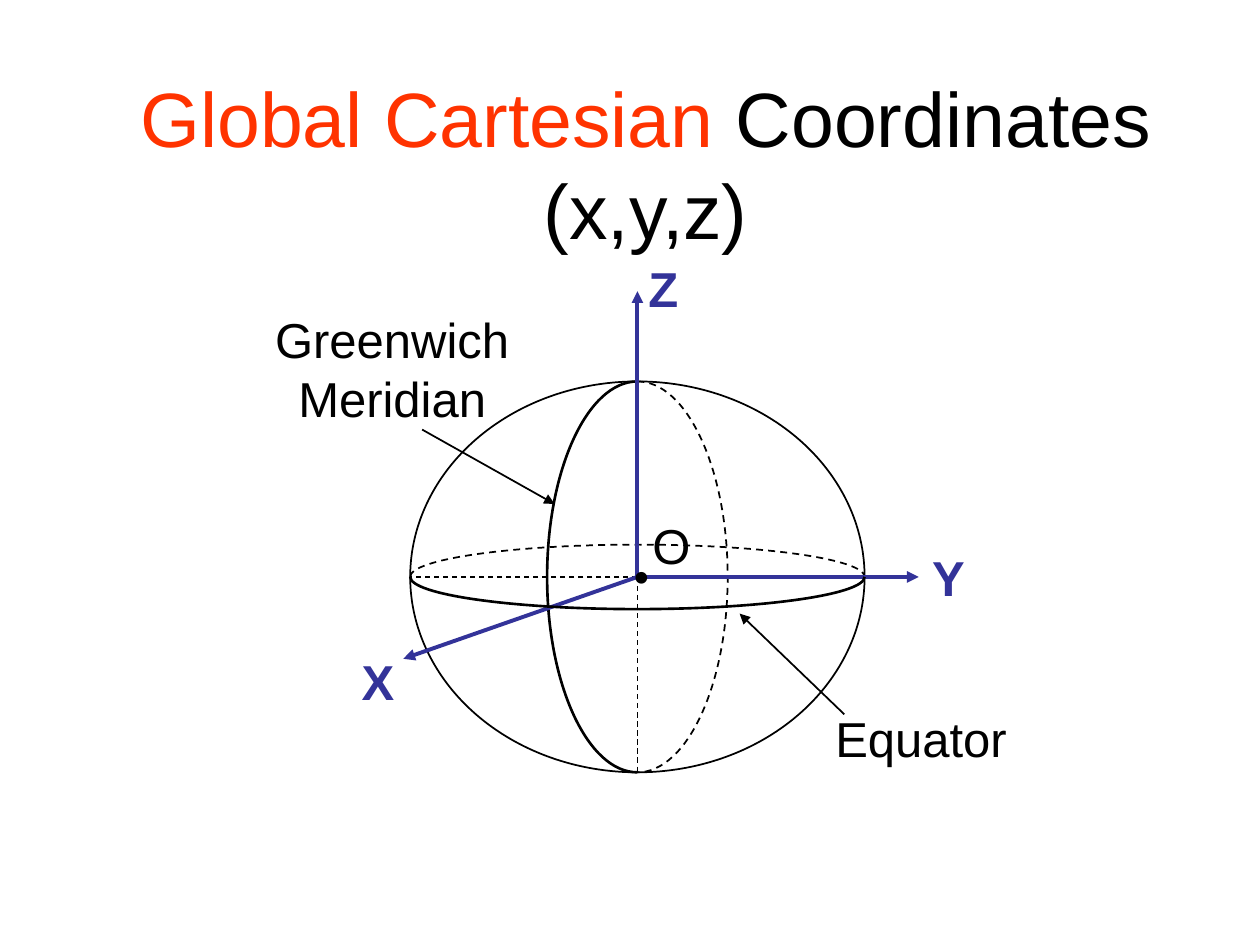
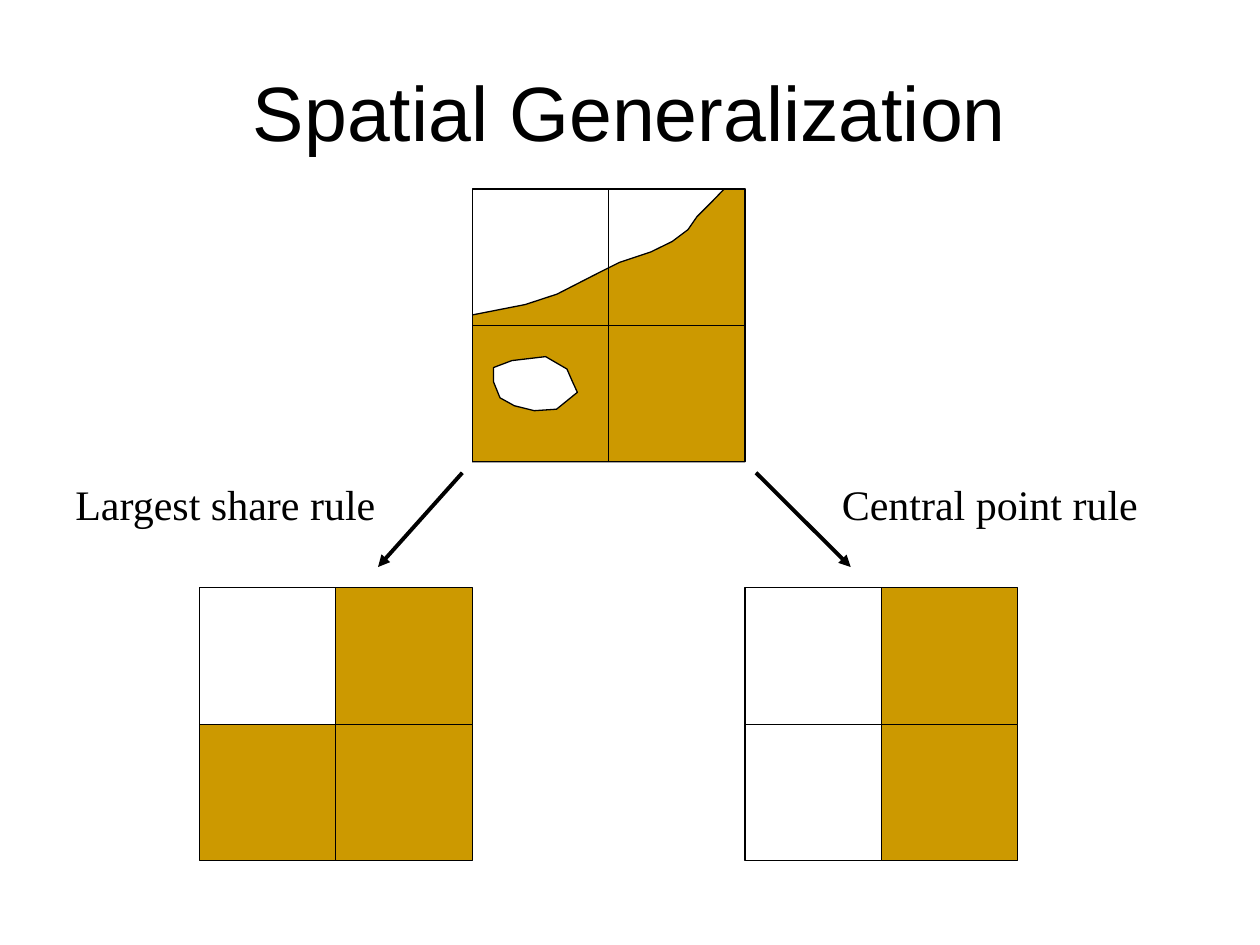
"""Build two slides on global coordinates and spatial generalization."""
from dataclasses import dataclass
from math import cos, radians, sin

from lxml import etree
from pptx import Presentation, util as u
from pptx.dml.color import RGBColor
from pptx.enum import dml, shapes, text
from pptx.oxml import ns

COLORS = {"ink": "000000", "accent": "FF3300", "axis": "333399",
          "land": "CC9900", "water": "FFFFFF"}
SANS, SERIF = "Arial", "Times New Roman"
QUARTER_HANDLE = 0.55
Point = tuple[float, float]


@dataclass(frozen=True)
class Label:
    words: str
    left: float
    top: float
    width: float
    height: float = 1.45
    size: int = 28
    font: str = SANS
    color: str = "ink"
    bold: bool = False
    centered: bool = False


@dataclass(frozen=True)
class Stroke:
    start: Point
    end: Point
    weight: float
    color: str = "ink"
    dashed: bool = False
    arrow: bool = False


@dataclass(frozen=True)
class HalfRing:
    radius_x: float
    radius_y: float
    first_angle: int
    weight: float
    dashed: bool = False


def rgb(color: str) -> RGBColor:
    return RGBColor.from_string(COLORS[color])


def style_line(line, weight: float, color: str = "ink", dashed: bool = False) -> None:
    line.color.rgb = rgb(color)
    line.width = u.Pt(weight)
    if dashed:
        line.dash_style = dml.MSO_LINE.DASH


def style_shape(shape, weight: float, fill: str | None = None, dashed: bool = False) -> None:
    shape.shadow.inherit = False
    if fill:
        shape.fill.solid()
        shape.fill.fore_color.rgb = rgb(fill)
    else:
        shape.fill.background()
    style_line(shape.line, weight, dashed=dashed)


def style_run(run, size: int, font: str, color: str, bold: bool = False) -> None:
    run.font.size = u.Pt(size)
    run.font.name = font
    run.font.color.rgb = rgb(color)
    run.font.bold = bold


def draw_title(slide, pieces: list[tuple[str, str]], left: float, top: float,
               width: float) -> None:
    frame = slide.shapes.add_textbox(
        u.Cm(left), u.Cm(top), u.Cm(width), u.Cm(3.18)).text_frame
    frame.word_wrap = True
    frame.vertical_anchor = text.MSO_ANCHOR.MIDDLE
    heading = frame.paragraphs[0]
    heading.alignment = text.PP_ALIGN.CENTER
    for words, color in pieces:
        run = heading.add_run()
        run.text = words
        style_run(run, 44, SANS, color)


def draw_label(slide, label: Label) -> None:
    frame = slide.shapes.add_textbox(
        u.Cm(label.left), u.Cm(label.top), u.Cm(label.width), u.Cm(label.height)).text_frame
    frame.word_wrap = False
    frame.auto_size = text.MSO_AUTO_SIZE.SHAPE_TO_FIT_TEXT
    frame.text = label.words
    for paragraph in frame.paragraphs:
        if label.centered:
            paragraph.alignment = text.PP_ALIGN.CENTER
        for run in paragraph.runs:
            style_run(run, label.size, label.font, label.color, label.bold)


def draw_stroke(slide, stroke: Stroke) -> None:
    connector = slide.shapes.add_connector(
        shapes.MSO_CONNECTOR.STRAIGHT,
        *(u.Cm(value) for value in stroke.start + stroke.end))
    style_line(connector.line, stroke.weight, stroke.color, stroke.dashed)
    if stroke.arrow:
        etree.SubElement(connector.line._get_or_add_ln(), ns.qn("a:tailEnd"), type="triangle")
    etree.SubElement(connector._element.spPr, ns.qn("a:effectLst"))


def add_outline(slide, points: list[Point], close: bool = True):
    first, *rest = [(u.Cm(x), u.Cm(y)) for x, y in points]
    builder = slide.shapes.build_freeform(*first)
    builder.add_line_segments(rest, close=close)
    return builder.convert_to_shape()


def bend_segments(outline) -> None:
    segments = list(outline._element.iter(ns.qn("a:lnTo")))
    for index in range(0, len(segments), 3):
        curve = etree.Element(ns.qn("a:cubicBezTo"))
        segments[index].addprevious(curve)
        for segment in segments[index:index + 3]:
            curve.append(segment[0])
            segment.getparent().remove(segment)


def draw_half_ring(slide, center: Point, ring: HalfRing) -> None:
    def place(angle: int, handle: float = 0) -> Point:
        a = radians(angle)
        return (center[0] + ring.radius_x * (cos(a) - handle * sin(a)),
                center[1] + ring.radius_y * (sin(a) + handle * cos(a)))

    points = [place(ring.first_angle)]
    for angle in (ring.first_angle, ring.first_angle + 90):
        points += [place(angle, QUARTER_HANDLE), place(angle + 90, -QUARTER_HANDLE),
                   place(angle + 90)]
    outline = add_outline(slide, points, close=False)
    bend_segments(outline)
    style_shape(outline, ring.weight, dashed=ring.dashed)


def draw_preset(slide, kind, left: float, top: float, width: float, height: float,
                weight: float, fill: str | None = None) -> None:
    shape = slide.shapes.add_shape(
        kind, u.Cm(left), u.Cm(top), u.Cm(width), u.Cm(height))
    style_shape(shape, weight, fill)


def build_coordinates(slide) -> None:
    draw_title(slide, [("Global Cartesian", "accent"), (" Coordinates (x,y,z)", "ink")],
               1.06, 1.69, 23.92)
    origin = (12.85, 11.63)
    globe_x, globe_y = 4.58, 3.94
    meridian_x, equator_y = 1.82, 0.65
    west = (origin[0] - globe_x, origin[1])
    south = (origin[0], origin[1] + globe_y)

    draw_half_ring(slide, origin, HalfRing(meridian_x, globe_y, 90, 1.5))
    draw_preset(slide, shapes.MSO_SHAPE.OVAL, origin[0] - globe_x, origin[1] - globe_y,
                2 * globe_x, 2 * globe_y, 1)
    for ring in (HalfRing(globe_x, equator_y, 180, 1, True),
                 HalfRing(meridian_x, globe_y, 270, 1, True)):
        draw_half_ring(slide, origin, ring)

    for hidden_end in (west, south):
        draw_stroke(slide, Stroke(origin, hidden_end, 0.75, dashed=True))
    for axis_tip in ((8.13, 13.28), (18.52, 11.63), (12.85, 5.87)):
        draw_stroke(slide, Stroke(origin, axis_tip, 2.25, "axis", arrow=True))
    for start, end in (((8.51, 8.66), (11.18, 10.16)), ((17.02, 14.4), (14.91, 12.37))):
        draw_stroke(slide, Stroke(start, end, 1, arrow=True))

    for axis, left, top in (("X", 7.04, 13), ("Y", 18.54, 10.92), ("Z", 12.82, 5.08)):
        draw_label(slide, Label(axis, left, top, 1.17, color="axis", bold=True))
    for label in (Label("O", 12.9, 10.26, 1.27),
                  Label("Greenwich\nMeridian", 5.29, 6.12, 5.23, 2.62, centered=True),
                  Label("Equator", 16.59, 14.16, 3.99),
                  Label("•", 12.51, 10.88, 0.86, font=SERIF)):
        draw_label(slide, label)
    draw_half_ring(slide, origin, HalfRing(globe_x, equator_y, 0, 1.5))


def build_generalization(slide) -> None:
    draw_title(slide, [("Spatial Generalization", "ink")], 1.9, 0.64, 21.6)
    cell = 2.75
    side = 2 * cell
    left, top = 9.52, 3.81
    right, bottom = left + side, top + side
    middle_x, middle_y = left + cell, top + cell

    shore = [(left, 6.35), (10.59, 6.14), (11.23, 5.93), (11.64, 5.72), (12.07, 5.5),
             (12.49, 5.29), (13.12, 5.08), (13.55, 4.87), (13.87, 4.63), (14.05, 4.37),
             (14.35, 4.07), (14.6, top)]
    lake = [(10.32, 7.27), (11, 7.19), (11.43, 7.44), (11.53, 7.67), (11.64, 7.91),
            (11.22, 8.25), (10.77, 8.28), (10.37, 8.18), (10.08, 8.02), (9.95, 7.7),
            (9.95, 7.41)]
    land = add_outline(slide, shore + [(right, top), (right, bottom), (left, bottom)],
                       close=False)
    style_shape(land, 0.75, "land")
    draw_preset(slide, shapes.MSO_SHAPE.RECTANGLE, left, top, side, side, 0.75)
    draw_stroke(slide, Stroke((middle_x, top), (middle_x, bottom), 0.75))
    draw_stroke(slide, Stroke((left, middle_y), (right, middle_y), 0.75))
    style_shape(add_outline(slide, lake), 0.75, "water")

    largest_share = ((None, "land"), ("land", "land"))
    central_point = ((None, "land"), (None, "land"))
    for grid_left, rows in ((left - side, largest_share), (right, central_point)):
        for row, fills in enumerate(rows):
            for column, fill in enumerate(fills):
                draw_preset(slide, shapes.MSO_SHAPE.RECTANGLE, grid_left + column * cell,
                            11.85 + row * cell, cell, cell, 0.75, fill)

    for start_x, end_x in ((9.32, 7.62), (15.24, 17.15)):
        draw_stroke(slide, Stroke((start_x, 9.53), (end_x, 11.43), 2.25, arrow=True))
    for rule, rule_left, width in (("Central point rule", 16.72, 6.48),
                                   ("Largest share rule", 1.27, 6.58)):
        draw_label(slide, Label(rule, rule_left, 9.53, width, 1.27, 24, SERIF))


def main() -> None:
    deck = Presentation()
    deck.slide_width, deck.slide_height = u.Cm(25.4), u.Cm(19.05)
    for build in (build_coordinates, build_generalization):
        build(deck.slides.add_slide(deck.slide_layouts[6]))
    deck.save("out.pptx")


if __name__ == "__main__":
    main()
